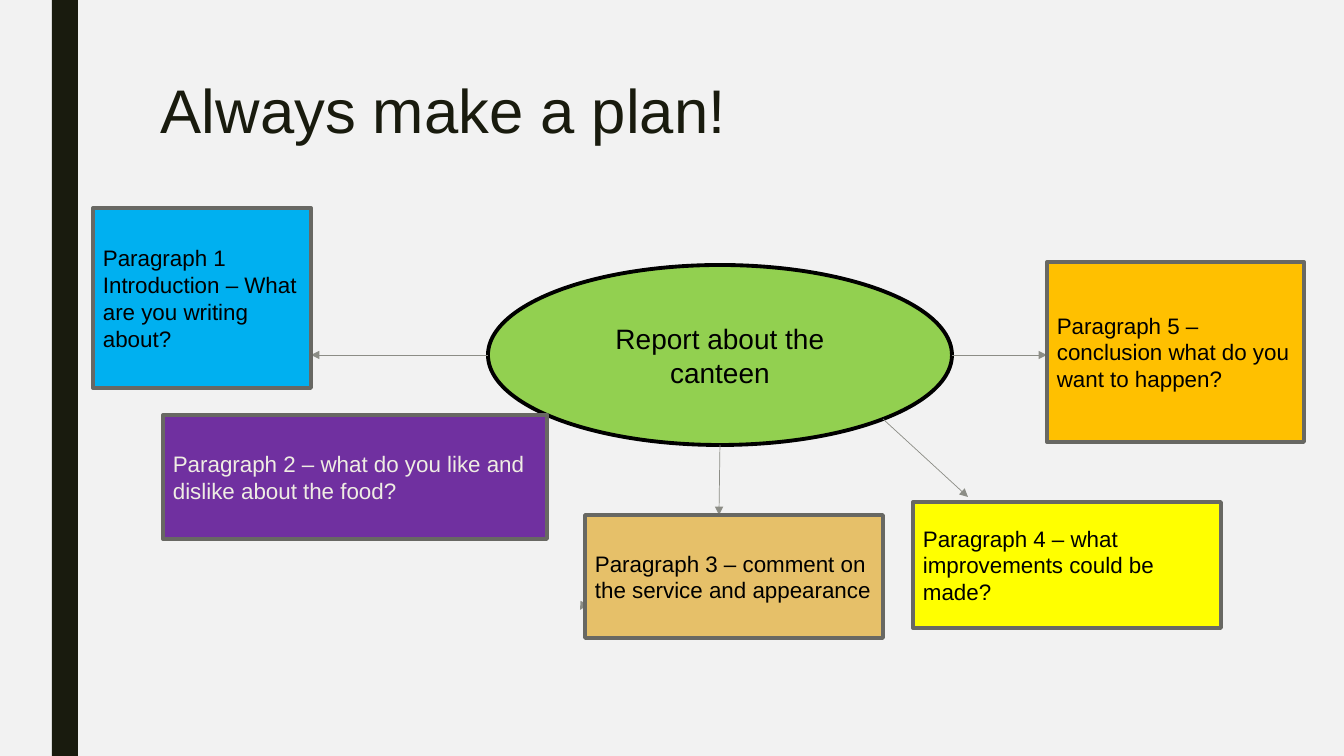
from lxml import etree
from pptx import Presentation
from pptx.dml.color import RGBColor
from pptx.enum.shapes import MSO_CONNECTOR, MSO_SHAPE
from pptx.enum.text import MSO_ANCHOR, PP_ALIGN
from pptx.oxml.ns import qn
from pptx.util import Pt

PX = 9525 * 20 / 21  # EMU per px, 100.8 px to the inch
FONT = "Arial"

PAPER = RGBColor(0xF2, 0xF2, 0xF2)
INK = RGBColor(0x19, 0x1B, 0x0E)
BLACK = RGBColor(0x00, 0x00, 0x00)
CREAM = RGBColor(0xEF, 0xED, 0xE3)
ARROW_GREY = RGBColor(0x8C, 0x8D, 0x86)
BORDER_GREY = RGBColor(0x68, 0x68, 0x63)
GREEN = RGBColor(0x92, 0xD0, 0x50)
BLUE = RGBColor(0x00, 0xB0, 0xF0)
PURPLE = RGBColor(0x70, 0x30, 0xA0)
TAN = RGBColor(0xE6, 0xC0, 0x69)
YELLOW = RGBColor(0xFF, 0xFF, 0x00)
ORANGE = RGBColor(0xFF, 0xC0, 0x00)

TOPIC_BOX = (488, 265, 464, 180)
# Box (left, top, width, height), fill, text colour, lines
PARAGRAPHS = [
    ((163, 415, 384, 124), PURPLE, CREAM,
     ["Paragraph 2 – what do you like and dislike about the food?"]),
    ((913, 502, 308, 126), YELLOW, BLACK,
     ["Paragraph 4 – what improvements could be made?"]),
    ((585, 515, 298, 123), TAN, BLACK,
     ["Paragraph 3 – comment on the service and appearance"]),
    ((93, 208, 218, 180), BLUE, BLACK,
     ["Paragraph 1", "Introduction – What are you writing about?"]),
    ((1047, 262, 257, 180), ORANGE, BLACK,
     ["Paragraph 5 – conclusion what do you want to happen?"]),
]


def emu(*lengths):
    return [round(length * PX) for length in lengths]


def write(frame, lines, size, color, align=PP_ALIGN.LEFT):
    frame.word_wrap = True
    frame.text = "\n".join(lines)
    for paragraph in frame.paragraphs:
        paragraph.alignment = align
        paragraph.font.name = FONT
        paragraph.font.size = Pt(size)
        paragraph.font.color.rgb = color


def add_block(slide, kind, box, fill, border=None):
    block = slide.shapes.add_shape(kind, *emu(*box))
    block.shadow.inherit = False
    block.fill.solid()
    block.fill.fore_color.rgb = fill
    if border is None:
        block.line.fill.background()
    else:
        block.line.color.rgb = border
        block.line.width = Pt(2.75)
    block.text_frame.vertical_anchor = MSO_ANCHOR.MIDDLE
    return block


def add_arrow(slide, start, end):
    arrow = slide.shapes.add_connector(MSO_CONNECTOR.STRAIGHT, *emu(*start, *end))
    arrow.line.color.rgb = ARROW_GREY
    arrow.line.width = Pt(0.5)
    outline = arrow.line._get_or_add_ln()
    etree.SubElement(outline, qn("a:tailEnd"), type="triangle")
    etree.SubElement(arrow._element.spPr, qn("a:effectLst"))


def add_title(slide, box):
    title = slide.shapes.add_textbox(*emu(*box)).text_frame
    write(title, ["Always make a plan!"], 44, INK)
    title.paragraphs[0].line_spacing = 0.89


def add_topic(slide, box):
    topic = add_block(slide, MSO_SHAPE.OVAL, box, GREEN, BLACK)
    write(topic.text_frame, ["Report about the canteen"], 20, BLACK, PP_ALIGN.CENTER)


def add_topic_arrows(slide, box):
    left, top, width, height = box
    right, bottom = left + width, top + height
    center, middle = left + width // 2, top + height // 2
    add_arrow(slide, (left + 136, bottom + 89), (left + 92, bottom + 165))
    add_arrow(slide, (right - 69, bottom - 26), (right + 16, bottom + 52))
    add_arrow(slide, (right, middle), (right + 95, middle))
    add_arrow(slide, (center, bottom), (center - 1, bottom + 70))
    add_arrow(slide, (left, middle), (left - 177, middle))


def add_paragraph_box(slide, box, fill, color, lines):
    card = add_block(slide, MSO_SHAPE.RECTANGLE, box, fill, BORDER_GREY)
    write(card.text_frame, lines, 16, color)


def build_plan_slide(deck):
    slide = deck.slides.add_slide(deck.slide_layouts[6])
    slide.background.fill.solid()
    slide.background.fill.fore_color.rgb = PAPER
    # Side bar and title
    add_block(slide, MSO_SHAPE.RECTANGLE, (52, 0, 26, 756), INK)
    add_title(slide, (151, 76, 1058, 163))
    # Mind map: topic, arrows, paragraph boxes
    add_topic(slide, TOPIC_BOX)
    add_topic_arrows(slide, TOPIC_BOX)
    for paragraph in PARAGRAPHS:
        add_paragraph_box(slide, *paragraph)


def main():
    deck = Presentation()
    deck.slide_width, deck.slide_height = emu(1344, 756)
    build_plan_slide(deck)
    deck.save("out.pptx")


if __name__ == "__main__":
    main()
